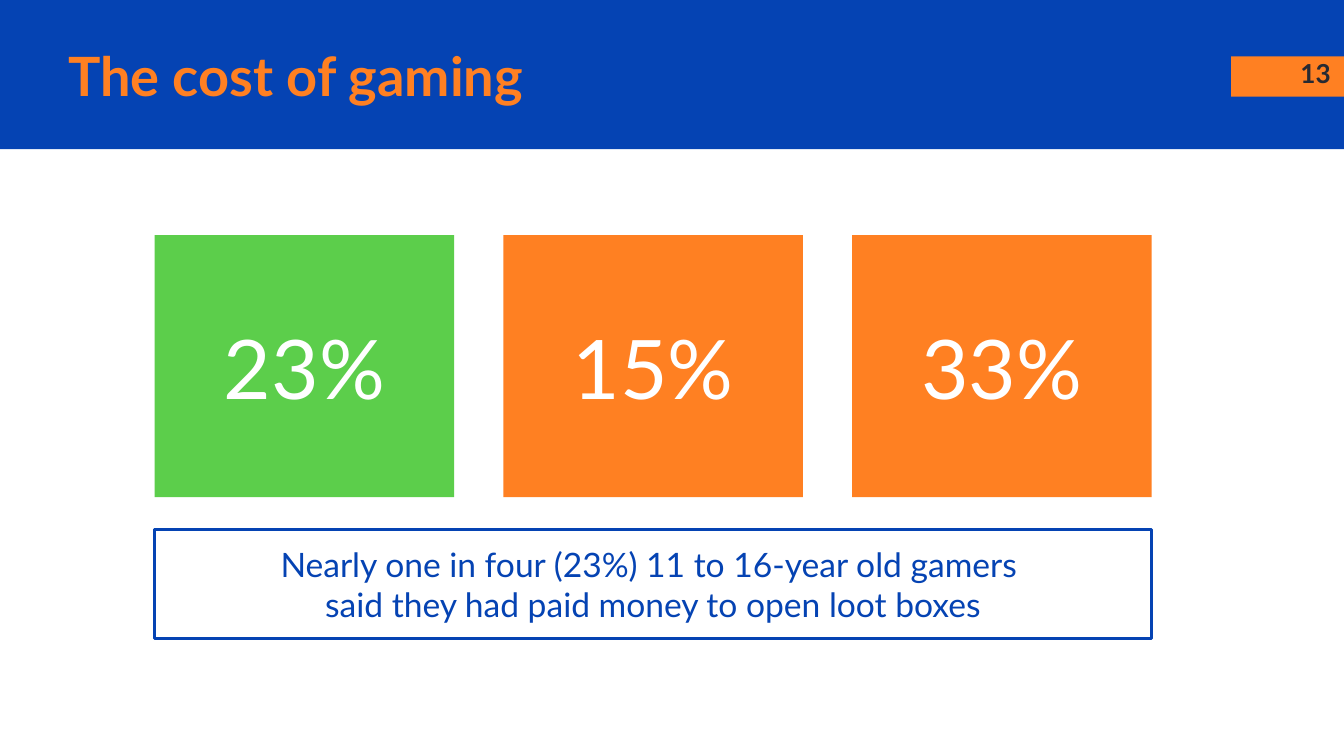
from pptx import Presentation
from pptx.dml.color import RGBColor
from pptx.enum import shapes, text
from pptx.util import Inches, Pt

BLUE, ORANGE, GREEN = "0543B3", "FF8022", "5CCE4B"
WHITE, DARK = "FFFFFF", "262A33"
LEFT, ROW_WIDTH, CARD_WIDTH = 1.15, 7.42, 2.23
SLIDE_WIDTH = 10
SLIDE_HEIGHT = SLIDE_WIDTH * 9 / 16


def color(value):
    return RGBColor.from_string(value)


def add_rectangle(page, left, top, width, height, fill=None, line=None):
    box = page.shapes.add_shape(
        shapes.MSO_SHAPE.RECTANGLE,
        Inches(left), Inches(top), Inches(width), Inches(height))
    box.shadow.inherit = False
    if fill:
        box.fill.solid()
        box.fill.fore_color.rgb = color(fill)
    else:
        box.fill.background()
    if line:
        box.line.color.rgb = color(line)
        box.line.width = Pt(1.5)
    else:
        box.line.fill.background()
    return box


def write(box, lines, size, ink, align, bold=False,
          anchor=text.MSO_ANCHOR.MIDDLE):
    """Fill a box with one paragraph per line, all in the same style."""
    frame = box.text_frame
    frame.word_wrap = True
    frame.vertical_anchor = anchor
    frame.margin_left = frame.margin_right = Inches(0.1)
    frame.margin_top = frame.margin_bottom = Inches(0.1)
    frame.text = "\n".join(lines)
    for para in frame.paragraphs:
        para.alignment = align
        para.font.name = "Lato"
        para.font.size = Pt(size)
        para.font.bold = bold
        para.font.color.rgb = color(ink)


def add_label(page, left, top, width, height, *args, **style):
    box = page.shapes.add_textbox(
        Inches(left), Inches(top), Inches(width), Inches(height))
    write(box, *args, **style)


def main():
    deck = Presentation()
    deck.slide_width = Inches(SLIDE_WIDTH)
    deck.slide_height = Inches(SLIDE_HEIGHT)
    page = deck.slides.add_slide(deck.slide_layouts[6])
    align = text.PP_ALIGN

    add_rectangle(page, 0, 0, SLIDE_WIDTH, 1.11, BLUE)
    add_rectangle(page, 9.16, 0.42, 0.84, 0.3, ORANGE)
    add_label(page, 9.4, 0.33, 0.6, 0.43, ["13"], 14, DARK, align.RIGHT,
              bold=True, anchor=text.MSO_ANCHOR.TOP)

    cards = [("23%", GREEN), ("15%", ORANGE), ("33%", ORANGE)]
    step = (ROW_WIDTH - CARD_WIDTH) / (len(cards) - 1)
    for index, (share, fill) in enumerate(cards):
        card = add_rectangle(page, LEFT + index * step, 1.75,
                             CARD_WIDTH, 1.95, fill)
        write(card, [share], 44, WHITE, align.CENTER)

    add_label(page, 0.41, 0.28, 8.46, 0.56, ["The cost of gaming"],
              29, ORANGE, align.LEFT, bold=True)

    finding = add_rectangle(page, LEFT, 3.94, ROW_WIDTH, 0.81, line=BLUE)
    write(finding, ["Nearly one in four (23%) 11 to 16-year old gamers ",
                    "said they had paid money to open loot boxes"],
          18, BLUE, align.CENTER)

    deck.save("out.pptx")


if __name__ == "__main__":
    main()
